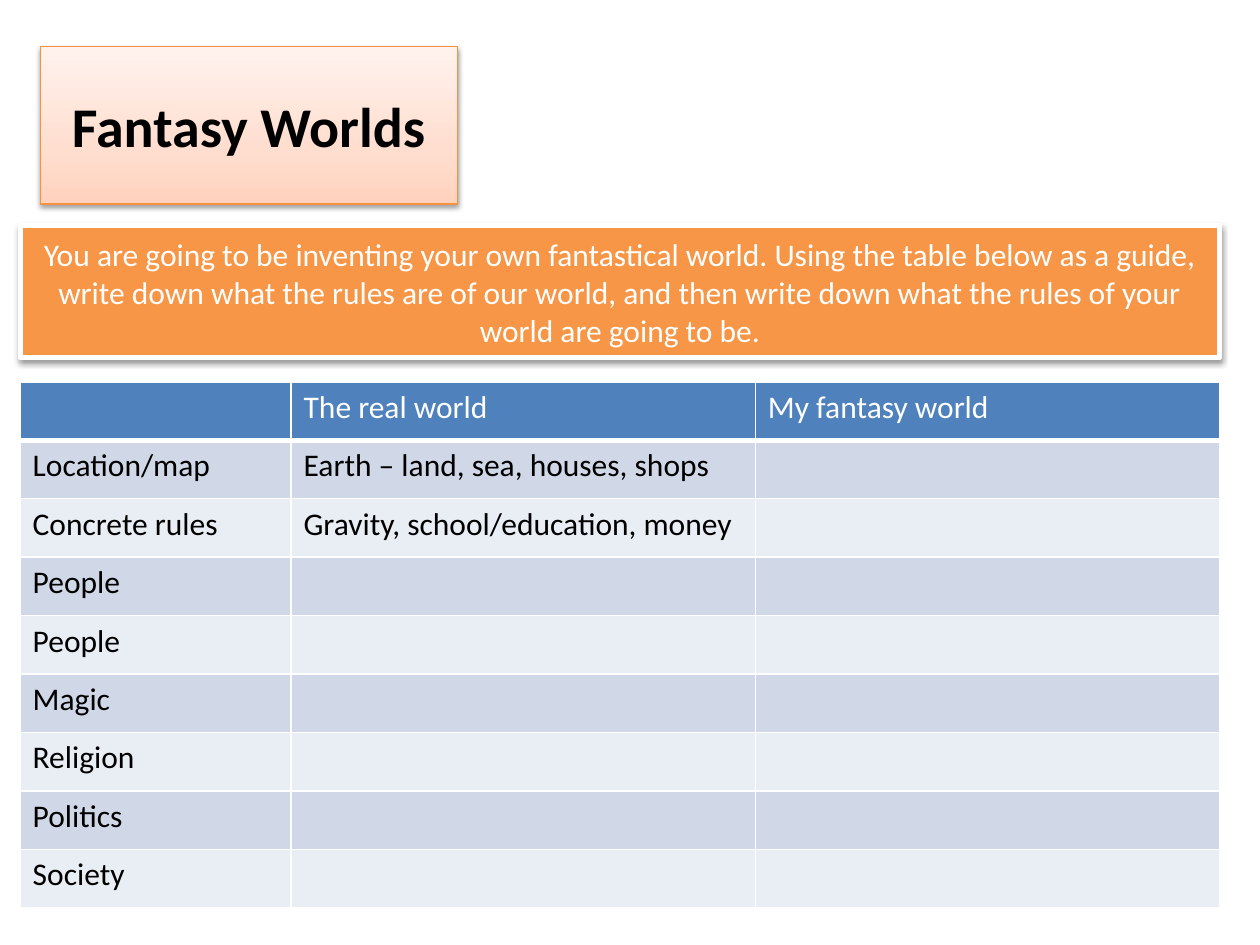
from copy import deepcopy

from lxml import etree
from pptx import Presentation
from pptx.dml.color import RGBColor
from pptx.enum.shapes import MSO_SHAPE
from pptx.enum.text import MSO_ANCHOR, PP_ALIGN
from pptx.oxml.ns import qn
from pptx.util import Inches, Pt

RECT = MSO_SHAPE.RECTANGLE
MIDDLE = MSO_ANCHOR.MIDDLE
CENTER = PP_ALIGN.CENTER

# Content
TITLE = "Fantasy Worlds"
TASK = ("You are going to be inventing your own fantastical world. Using the table "
        "below as a guide, write down what the rules are of our world, and then "
        "write down what the rules of your world are going to be.")
ROWS = [
    ("", "The real world", "My fantasy world"),
    ("Location/map", "Earth – land, sea, houses, shops", ""),
    ("Concrete rules", "Gravity, school/education, money", ""),
    ("People", "", ""),
    ("People", "", ""),
    ("Magic", "", ""),
    ("Religion", "", ""),
    ("Politics", "", ""),
    ("Society", "", ""),
]

# Look and layout, in inches
FONT = "Calibri"
BLACK, WHITE, ORANGE = "000000", "FFFFFF", "F79646"
HEADER, BANDS = "4F81BD", ("E9EDF4", "D0D8E8")
TITLE_STOPS = [(0, "FFD2BD"), (0.35, "FFDED0"), (1, "FFF2ED")]
LEFT, WIDTH = 0.16, 9.52
COLUMNS = (2.15, 3.685, 3.685)
TABLE_TOP, TABLE_HEIGHT = 3.03, 4.18


def rgb(value):
    return RGBColor.from_string(value)


def place(s, left, top, width, height):
    s.left, s.top, s.width, s.height = map(Inches, (left, top, width, height))


def write(holder, text, size, color, bold=False, align=None):
    tf = holder.text_frame
    tf.text = text
    p = tf.paragraphs[0]
    p.alignment = align
    p.font.name, p.font.size, p.font.bold = FONT, Pt(size), bold
    p.font.color.rgb = rgb(color)


def frame(s, line_color, line_width):
    """Outline, soft shadow below, and wrapped text in the middle."""
    s.line.color.rgb = rgb(line_color)
    s.line.width = Pt(line_width)
    s.shadow.inherit = False
    effects = s._element.spPr.find(qn("a:effectLst"))
    shadow = etree.SubElement(effects, qn("a:outerShdw"), blurRad=str(Pt(3.1)),
                              dist=str(Pt(1.6)), dir="5400000", rotWithShape="0")
    color = etree.SubElement(shadow, qn("a:srgbClr"), val=BLACK)
    etree.SubElement(color, qn("a:alpha"), val="38000")
    s.text_frame.word_wrap = True
    s.text_frame.vertical_anchor = MIDDLE


def gradient(s, stops, angle):
    s.fill.gradient()
    s.fill.gradient_angle = angle
    stop_list = s._element.spPr.find(qn("a:gradFill")).find(qn("a:gsLst"))
    stop_list.append(deepcopy(stop_list[-1]))
    for stop, (position, color) in zip(s.fill.gradient_stops, stops):
        stop.position = position
        stop.color.rgb = rgb(color)


def borders(cell, bottom):
    tcPr = cell._tc.get_or_add_tcPr()
    for side, width in (("L", 1), ("R", 1), ("T", 1), ("B", bottom)):
        ln = etree.SubElement(tcPr, qn(f"a:ln{side}"), w=str(Pt(width)))
        fill = etree.SubElement(ln, qn("a:solidFill"))
        etree.SubElement(fill, qn("a:srgbClr"), val=WHITE)


prs = Presentation()
prs.slide_width, prs.slide_height = Inches(10), Inches(7.5)
slide = prs.slides.add_slide(prs.slide_layouts[5])

# Title
title = slide.shapes.title
place(title, 0.32, 0.37, 3.31, 1.25)
gradient(title, TITLE_STOPS, 90)
frame(title, "F69240", 0.75)
write(title, TITLE, 32, BLACK, bold=True, align=CENTER)

# Table of world rules
table = slide.shapes.add_table(
    len(ROWS), len(COLUMNS), Inches(LEFT), Inches(TABLE_TOP),
    Inches(WIDTH), Inches(TABLE_HEIGHT)).table
for column, width in zip(table.columns, COLUMNS):
    column.width = Inches(width)
for i, row in enumerate(ROWS):
    is_header = i == 0
    for j, text in enumerate(row):
        cell = table.cell(i, j)
        borders(cell, 3 if is_header else 1)
        cell.fill.solid()
        cell.fill.fore_color.rgb = rgb(HEADER if is_header else BANDS[i % 2])
        write(cell, text, 18, WHITE if is_header else BLACK)

# Task banner
banner = slide.shapes.add_shape(RECT, 0, 0, 0, 0)
place(banner, LEFT, 1.79, WIDTH, 1.05)
banner.fill.solid()
banner.fill.fore_color.rgb = rgb(ORANGE)
frame(banner, WHITE, 3)
write(banner, TASK, 18, WHITE, align=CENTER)

prs.save("out.pptx")
